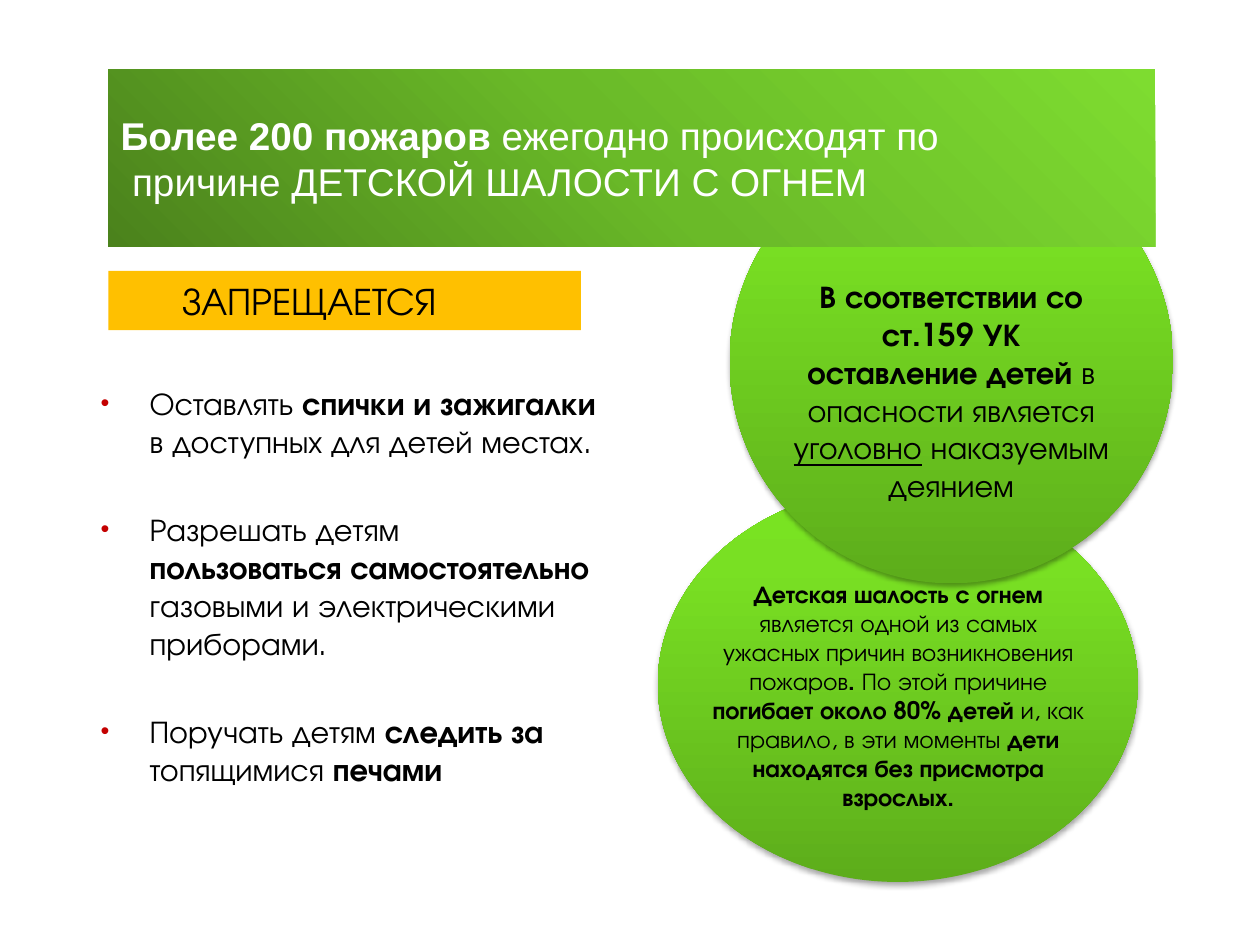
"""Build a slide on fires caused by children playing with fire."""
from dataclasses import dataclass

import lxml.etree
import pptx
import pptx.dml.color
import pptx.enum.shapes
import pptx.enum.text
import pptx.oxml
import pptx.oxml.ns
import pptx.util

Inches = pptx.util.Inches
Pt = pptx.util.Pt
Align = pptx.enum.text.PP_ALIGN
Kind = pptx.enum.shapes.MSO_SHAPE
qn = pptx.oxml.ns.qn

HUES = {"white": "FFFFFF", "black": "000000", "amber": "FFC000", "red": "C40000",
        "leaf": "5DAD1B", "lime": "79E023", "glow": "79E520",
        "moss": "4B821C", "grass": "6ABA28", "spring": "7EDC30"}
SANS = "Arial"
ROUND = "TeX Gyre Adventor"
UPWARD = '<a:lin ang="16200000" scaled="0"/>'
CORNER = '<a:path path="circle"><a:fillToRect t="100000" r="100000"/></a:path>'


@dataclass(frozen=True)
class Box:
    left: float
    top: float
    width: float
    height: float

    def place(self) -> tuple:
        return tuple(map(Inches, (self.left, self.top, self.width, self.height)))


@dataclass(frozen=True)
class Run:
    text: str
    bold: bool = False
    under: bool = False


@dataclass(frozen=True)
class Style:
    size: float
    face: str = ROUND
    hue: str = "black"
    align: Align = Align.LEFT
    bullet: bool = False
    gap: float = 0


TITLE = [
    [Run("Более 200 пожаров", True), Run(" ежегодно происходят по")],
    [Run("причине ДЕТСКОЙ ШАЛОСТИ С ОГНЕМ")],
]
LAW = [
    [Run("В соответствии со", True)],
    [Run("ст.159 УК", True)],
    [Run("оставление детей ", True), Run("в опасности является "),
     Run("уголовно", under=True), Run(" наказуемым деянием")],
]
CAUSE = [
    [Run("Детская шалость с огнем ", True),
     Run("является одной из самых ужасных причин возникновения пожаров"),
     Run(". ", True), Run("По этой причине "),
     Run("погибает около 80% детей ", True), Run("и, как правило, в эти моменты "),
     Run("дети находятся без присмотра взрослых.", True)],
]
RULES = [
    [Run("Оставлять "), Run("спички и зажигалки ", True),
     Run("в доступных для детей местах.")],
    [Run("Разрешать детям "), Run("пользоваться самостоятельно ", True),
     Run("газовыми и электрическими приборами.")],
    [Run("Поручать детям "), Run("следить за ", True),
     Run("топящимися "), Run("печами", True)],
]


def parse(body: str) -> lxml.etree._Element:
    head, tail = body.split(">", 1) if not body.split(">", 1)[0].endswith("/") else (body[:-2], None)
    names = pptx.oxml.ns.nsdecls("a")
    return pptx.oxml.parse_xml(f"{head} {names}/>" if tail is None else f"{head} {names}>{tail}")


def indent(para, left: float, first: float = 0) -> None:
    props = para._p.get_or_add_pPr()
    props.set("marL", str(Inches(left)))
    props.set("indent", str(Inches(first)))


def add_bullet(para) -> None:
    indent(para, 0.45, -0.39)
    props = para._p.get_or_add_pPr()
    for body in (f'<a:buClr><a:srgbClr val="{HUES["red"]}"/></a:buClr>',
                 '<a:buSzPct val="80000"/>', '<a:buFont typeface="Arial"/>',
                 '<a:buChar char="•"/>'):
        props.append(parse(body))


def write(shape, paras: list[list[Run]], style: Style) -> None:
    frame = shape.text_frame
    frame.word_wrap = True
    for num, runs in enumerate(paras):
        para = frame.add_paragraph() if num else frame.paragraphs[0]
        para.alignment = style.align
        para.space_before = Pt(style.gap if num else 0)
        if style.bullet:
            add_bullet(para)
        font = para.font
        font.size, font.name = Pt(style.size), style.face
        font.color.rgb = pptx.dml.color.RGBColor.from_string(HUES[style.hue])
        same = len({(run.bold, run.under) for run in runs}) == 1
        if same:
            font.bold = runs[0].bold
        for item in runs:
            run = para.add_run()
            run.text = item.text
            if not same:
                run.font.bold = item.bold
                run.font.underline = item.under


def add_shape(slide, kind: Kind, box: Box):
    shape = slide.shapes.add_shape(kind, *box.place())
    shape.shadow.inherit = False
    shape.line.fill.background()
    shape.text_frame.vertical_anchor = pptx.enum.text.MSO_ANCHOR.MIDDLE
    return shape


def blend(shape, stops: list[tuple[int, str]], course: str) -> None:
    marks = "".join(f'<a:gs pos="{pos * 1000}"><a:srgbClr val="{HUES[hue]}"/></a:gs>'
                    for pos, hue in stops)
    fill = parse(f'<a:gradFill rotWithShape="1"><a:gsLst>{marks}</a:gsLst>{course}</a:gradFill>')
    shape._element.spPr.find(qn("a:prstGeom")).addnext(fill)


def add_disc(slide, box: Box) -> None:
    disc = add_shape(slide, Kind.OVAL, box)
    blend(disc, [(0, "leaf"), (80, "lime"), (100, "glow")], UPWARD)
    shade = parse(f'<a:outerShdw blurRad="{Pt(3.1)}" dist="{Pt(1.8)}" dir="5400000" '
                  f'rotWithShape="0"><a:srgbClr val="{HUES["black"]}">'
                  '<a:alpha val="35000"/></a:srgbClr></a:outerShdw>')
    disc._element.spPr.find(qn("a:effectLst")).append(shade)


def add_text(slide, box: Box, paras: list[list[Run]], style: Style) -> None:
    write(slide.shapes.add_textbox(*box.place()), paras, style)


def main() -> None:
    deck = pptx.Presentation()
    deck.slide_width, deck.slide_height = Inches(10), Inches(7.5)
    slide = deck.slides.add_slide(deck.slide_layouts[6])

    for box in (Box(5.22, 3.86, 3.81, 3.14), Box(5.79, 1.11, 3.52, 3.52)):
        add_disc(slide, box)

    title = add_shape(slide, Kind.RECTANGLE, Box(0.86, 0.55, 8.31, 1.41))
    blend(title, [(0, "moss"), (50, "grass"), (100, "spring")], CORNER)
    write(title, TITLE, Style(22.1, SANS, "white"))
    indent(title.text_frame.paragraphs[1], 0.09)

    add_text(slide, Box(5.87, 2.15, 3.36, 1.92), LAW, Style(18, align=Align.CENTER))
    add_text(slide, Box(5.53, 4.55, 3.2, 1.97), CAUSE, Style(13.8, align=Align.CENTER))

    label = add_shape(slide, Kind.RECTANGLE, Box(0.86, 2.15, 3.75, 0.47))
    label.fill.solid()
    label.fill.fore_color.rgb = pptx.dml.color.RGBColor.from_string(HUES["amber"])
    write(label, [[Run("ЗАПРЕЩАЕТСЯ")]], Style(22.1))
    indent(label.text_frame.paragraphs[0], 0.49)

    add_text(slide, Box(0.64, 3, 4.2, 3.98), RULES, Style(18, bullet=True, gap=28.8))
    deck.save("out.pptx")


if __name__ == "__main__":
    main()
